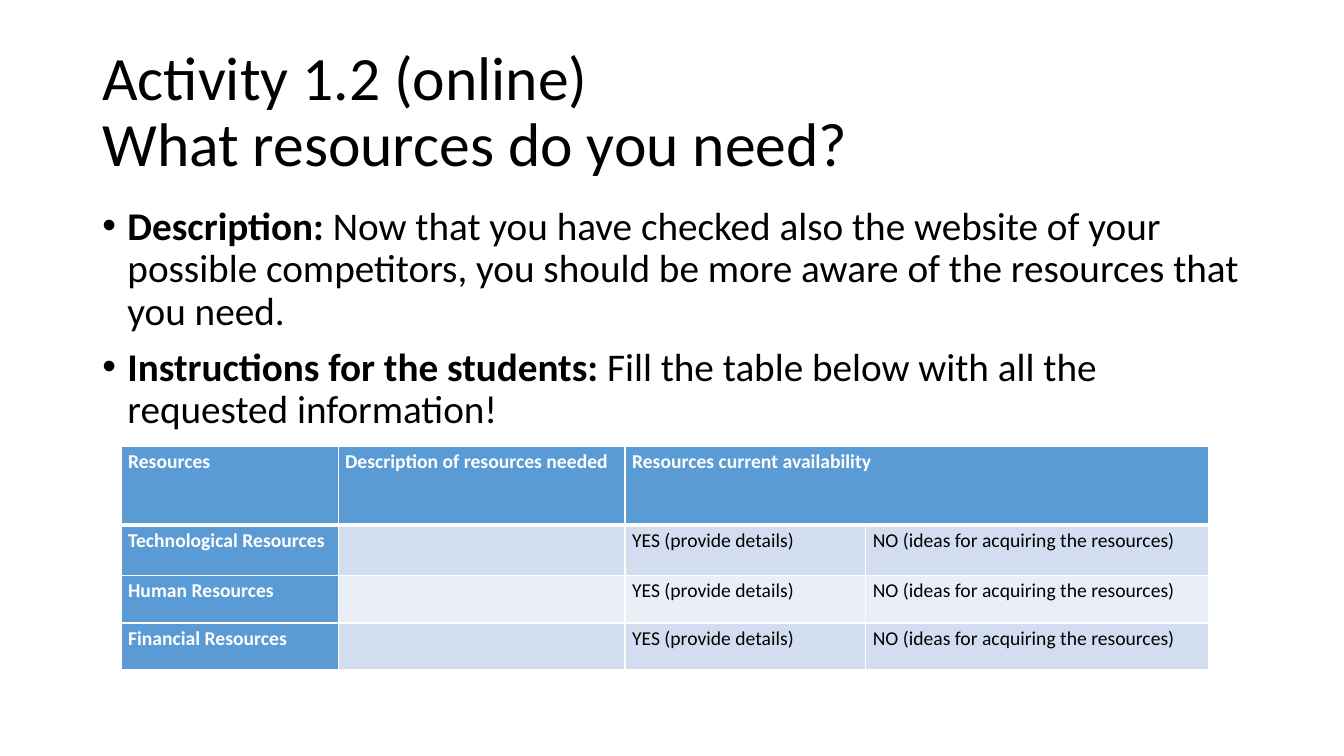
from lxml.etree import SubElement
from pptx import Presentation
from pptx.dml.color import RGBColor
from pptx.enum.text import MSO_ANCHOR
from pptx.oxml.ns import qn
from pptx.util import Pt

# Content
TITLE = ["Activity 1.2 (online)", "What resources do you need?"]
POINTS = [
    ("Description: ", "Now that you have checked also the website of your possible "
     "competitors, you should be more aware of the resources that you need."),
    ("Instructions for the students: ",
     "Fill the table below with all the requested information!"),
]
HEADS = ["Resources", "Description of resources needed",
         "Resources current availability", ""]
KINDS = ["Technological Resources", "Human Resources", "Financial Resources"]
ASKS = ["", "YES (provide details)", "NO (ideas for acquiring the resources)"]
GRID = [HEADS] + [[kind] + ASKS for kind in KINDS]

# Style and layout
FONT = "Calibri"
BLACK = RGBColor(0, 0, 0)
WHITE = RGBColor(255, 255, 255)
BLUE = RGBColor(0x5B, 0x9B, 0xD5)
BANDS = [RGBColor(0xEA, 0xEF, 0xF7), RGBColor(0xD2, 0xDE, 0xEF)]
LEFT, WIDE = 66, 828
COLS = [155, 205, 172, 245]
ROWS = [56, 36, 34, 33]


def add_run(para, text, size, color=BLACK, bold=False):
    run = para.add_run()
    run.text = text
    font = run.font
    font.name, font.size, font.bold = FONT, Pt(size), bold
    font.color.rgb = color


def add_box(top, high, anchor):
    box = slide.shapes.add_textbox(Pt(LEFT), Pt(top), Pt(WIDE), Pt(high))
    frame = box.text_frame
    frame.word_wrap = True
    frame.vertical_anchor = anchor
    return frame


def add_bullet(para):
    props = para._p.get_or_add_pPr()
    props.set("marL", str(Pt(18)))
    props.set("indent", str(Pt(-18)))
    SubElement(props, qn("a:buFont"), typeface="Arial")
    SubElement(props, qn("a:buChar"), char="•")


def add_edge(cell, side, width):
    props = cell._tc.get_or_add_tcPr()
    line = SubElement(props, qn("a:ln" + side), w=str(Pt(width)))
    fill = SubElement(line, qn("a:solidFill"))
    SubElement(fill, qn("a:srgbClr"), val=str(WHITE))


deck = Presentation()
deck.slide_width, deck.slide_height = Pt(960), Pt(540)
slide = deck.slides.add_slide(deck.slide_layouts[6])

# Title
para = add_box(29, 104, MSO_ANCHOR.MIDDLE).paragraphs[0]
para.line_spacing = 0.9
for i, text in enumerate(TITLE):
    if i:
        para.add_line_break()
    add_run(para, text, 44)

# Bullet points
frame = add_box(144, 343, MSO_ANCHOR.TOP)
for i, (lead, text) in enumerate(POINTS):
    para = frame.add_paragraph() if i else frame.paragraphs[0]
    para.line_spacing = 0.9
    para.space_before = Pt(10)
    add_bullet(para)
    add_run(para, lead, 28, bold=True)
    add_run(para, text, 28)

# Table
table = slide.shapes.add_table(len(ROWS), len(COLS), Pt(86.5), Pt(319),
                               Pt(sum(COLS)), Pt(sum(ROWS))).table
for col, width in zip(table.columns, COLS):
    col.width = Pt(width)
for row, high in zip(table.rows, ROWS):
    row.height = Pt(high)
table.cell(0, 2).merge(table.cell(0, 3))

for r, texts in enumerate(GRID):
    for c, text in enumerate(texts):
        cell = table.cell(r, c)
        head = r == 0 or c == 0
        cell.margin_left = cell.margin_right = Pt(5)
        cell.margin_top = cell.margin_bottom = 0
        for side in "LRTB":
            thick = (r, side) in [(0, "B"), (1, "T")]
            add_edge(cell, side, 3 if thick else 1)
        cell.fill.solid()
        cell.fill.fore_color.rgb = BLUE if head else BANDS[r % 2]
        if text:
            para = cell.text_frame.paragraphs[0]
            para.line_spacing = 1.15
            para.space_after = Pt(10)
            add_run(para, text, 14, WHITE if head else BLACK, head)

deck.save("out.pptx")
